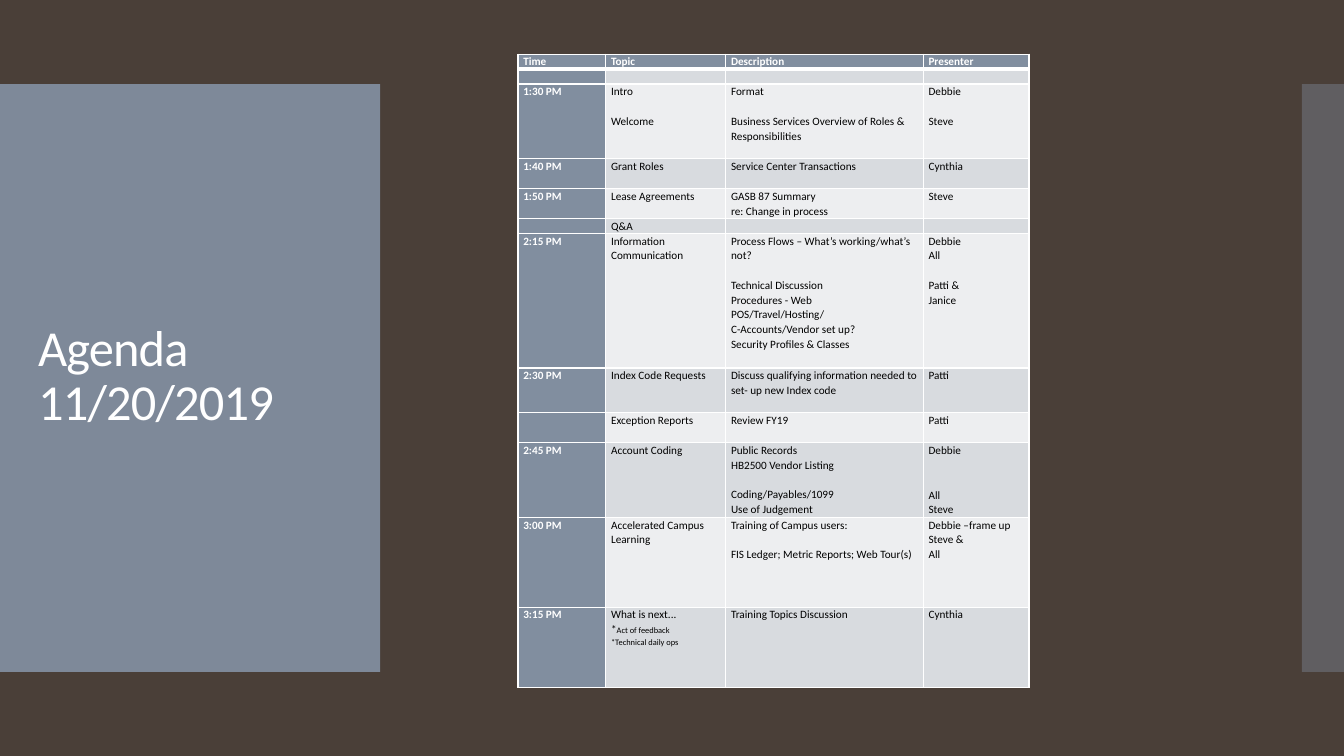
from dataclasses import dataclass

from lxml.etree import SubElement as Sub
from pptx import Presentation
from pptx.dml.color import RGBColor as RGB
from pptx.enum.shapes import MSO_SHAPE as Shape
from pptx.enum.text import MSO_ANCHOR as Anchor, MSO_AUTO_SIZE as Fit, PP_ALIGN as Align
from pptx.oxml.ns import qn
from pptx.util import Pt


@dataclass(frozen=True)
class Theme:
    font: str = "Calibri"
    back: str = "4A3F38"
    accent: str = "818E9F"
    bands: tuple = ("EDEEF0", "D8DBDF")
    light: str = "FFFFFF"
    dark: str = "000000"
    title: float = 36
    body: float = 8
    small: float = 6
    title_leading: float = 0.9
    body_leading: float = 1.07
    line: float = 10.68
    inset: float = 3.8
    rule: float = 1
    head_rule: float = 3


COLUMNS = (62.7, 85.7, 141.1, 75.6)

AGENDA = (
    (1, "Time", "Topic", "Description", "Presenter"),
    (1, "", "", "", ""),
    (5, "1:30 PM", "Intro\n\nWelcome",
     "Format\n\nBusiness Services Overview of Roles & Responsibilities",
     "Debbie\n\nSteve"),
    (2, "1:40 PM", "Grant Roles", "Service Center Transactions", "Cynthia"),
    (2, "1:50 PM", "Lease Agreements", "GASB 87 Summary\nre: Change in process", "Steve"),
    (1, "", "Q&A", "", ""),
    (9, "2:15 PM", "Information Communication",
     "Process Flows – What’s working/what’s not?\n\nTechnical Discussion\n"
     "Procedures - Web\nPOS/Travel/Hosting/\nC-Accounts/Vendor set up?\n"
     "Security Profiles & Classes",
     "Debbie\nAll\n\nPatti &\nJanice"),
    (3, "2:30 PM", "Index Code Requests",
     "Discuss qualifying information needed to set- up new Index code", "Patti"),
    (2, "", "Exception Reports", "Review FY19", "Patti"),
    (5, "2:45 PM", "Account Coding",
     "Public Records\nHB2500 Vendor Listing\n\nCoding/Payables/1099\nUse of Judgement",
     "Debbie\n\n\nAll\nSteve"),
    (6, "3:00 PM", "Accelerated Campus Learning",
     "Training of Campus users:\n\nFIS Ledger; Metric Reports; Web Tour(s)",
     "Debbie –frame up Steve &\nAll"),
    (5.36, "3:15 PM", "What is next...\n*^Act of feedback\n^*Technical daily ops",
     "Training Topics Discussion", "Cynthia"),
)


def assign(obj, fmt):
    for name, value in fmt.items():
        setattr(obj, name, value)


class Deck:
    def __init__(self, theme, width, height):
        self.theme = theme
        self.prs = Presentation()
        assign(self.prs, {"slide_width": Pt(width), "slide_height": Pt(height)})
        self.s = self.prs.slides.add_slide(self.prs.slide_layouts[5])
        self.paint(self.s.background.fill, theme.back)

    def paint(self, fill, color):
        fill.solid()
        fill.fore_color.rgb = RGB.from_string(color)

    def run(self, p, text, size, color, bold=False):
        r = p.add_run()
        r.text = text
        assign(r.font, {"name": self.theme.font, "size": Pt(size), "bold": bold})
        r.font.color.rgb = RGB.from_string(color)
        return r

    def panel(self, left, top, width, height, opacity):
        sp = self.s.shapes.add_shape(Shape.RECTANGLE, Pt(left), Pt(top), Pt(width), Pt(height))
        sp.shadow.inherit = False
        sp.line.fill.background()
        self.paint(sp.fill, self.theme.accent)
        color = sp.fill._xPr.find(qn("a:solidFill"))[0]
        Sub(color, qn("a:alpha"), val=str(opacity * 1000))
        self.s.shapes.title.element.addprevious(sp.element)

    def title(self, text, left, top, width, height):
        sp = self.s.shapes.title
        assign(sp, {"left": Pt(left), "top": Pt(top), "width": Pt(width), "height": Pt(height)})
        tf = sp.text_frame
        assign(tf, {"word_wrap": True, "auto_size": Fit.NONE, "vertical_anchor": Anchor.MIDDLE})
        p = tf.paragraphs[0]
        assign(p, {"alignment": Align.LEFT, "line_spacing": self.theme.title_leading})
        r = self.run(p, text, self.theme.title, self.theme.light)
        r.font._element.set("spc", "-60")

    def borders(self, cell, row):
        t = self.theme
        head_side = {0: "B", 1: "T"}.get(row)
        tc_pr = cell._tc.get_or_add_tcPr()
        for side in "LRTB":
            width = t.head_rule if side == head_side else t.rule
            ln = Sub(tc_pr, qn(f"a:ln{side}"), w=str(Pt(width)))
            Sub(Sub(ln, qn("a:solidFill")), qn("a:srgbClr"), val=t.light)

    def cell_text(self, cell, text, color, bold):
        t = self.theme
        tf = cell.text_frame
        p, gap = tf.paragraphs[0], 0
        for i, line in enumerate(text.split("\n")):
            if i and not line:
                gap += 1
                continue
            p = tf.add_paragraph() if i else p
            assign(p, {"line_spacing": t.body_leading, "space_before": Pt(gap * t.line)})
            gap = 0
            normal, _, small = line.partition("^")
            for part, size in ((normal, t.body), (small, t.small)):
                if part:
                    self.run(p, part, size, color, bold)
            if not line:
                Sub(p._p, qn("a:endParaRPr"), sz=str(t.body * 100))

    def table(self, rows, columns, left, top):
        t = self.theme
        heights = [row[0] * t.line for row in rows]
        tbl = self.s.shapes.add_table(len(rows), len(columns), Pt(left), Pt(top),
                                      Pt(sum(columns)), Pt(sum(heights))).table
        for col, width in zip(tbl.columns, columns):
            col.width = Pt(width)
        for i, (_, *texts) in enumerate(rows):
            tbl.rows[i].height = Pt(heights[i])
            for j, text in enumerate(texts):
                cell = tbl.cell(i, j)
                strong = i == 0 or j == 0
                assign(cell, {"margin_left": Pt(t.inset), "margin_right": Pt(t.inset),
                              "margin_top": 0, "margin_bottom": 0,
                              "vertical_anchor": Anchor.TOP})
                self.borders(cell, i)
                self.paint(cell.fill, t.accent if strong else t.bands[i % 2])
                self.cell_text(cell, text, t.light if strong else t.dark, strong)

    def save(self):
        self.prs.save("out.pptx")


def main():
    deck = Deck(Theme(), 960, 540)
    deck.panel(0, 60, 271.5, 420, 95)
    deck.panel(930, 60, 30, 420, 40)
    deck.title("Agenda 11/20/2019", 20, 88.5, 232, 362)
    deck.table(AGENDA, COLUMNS, 370, 38.7)
    deck.save()


if __name__ == "__main__":
    main()
